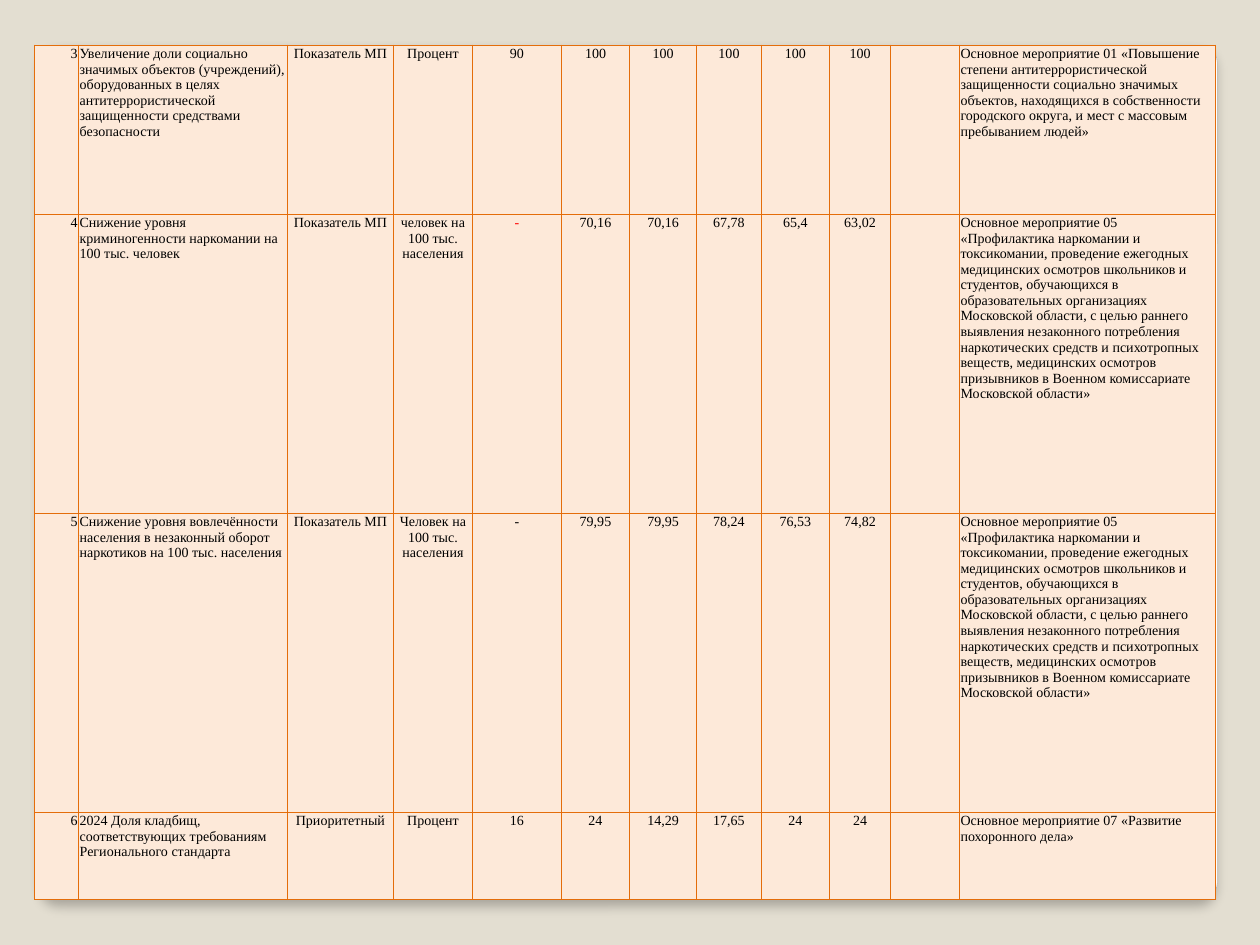
from lxml.etree import SubElement as Sub
from pptx import Presentation
from pptx.dml.color import RGBColor
from pptx.enum.shapes import MSO_SHAPE as Shape
from pptx.enum.text import PP_ALIGN as Align
from pptx.oxml.ns import qn
from pptx.util import Pt


def color(code):
    return RGBColor.from_string(code)


class Deck:
    font, size = "Times New Roman", 8
    ink, red = "000000", "FF0000"
    back, cream, edge = "E3DED1", "FDE9D9", "E46D0A"

    def __init__(self):
        self.prs = Presentation()
        self.prs.slide_width, self.prs.slide_height = Pt(720), Pt(540)
        self.slide = self.prs.slides.add_slide(self.prs.slide_layouts[6])
        fill = self.slide.background.fill
        fill.solid()
        fill.fore_color.rgb = color(self.back)

    def panel(self, left, top, width, height):
        box = self.slide.shapes.add_shape(
            Shape.ROUNDED_RECTANGLE, Pt(left), Pt(top), Pt(width), Pt(height))
        box.adjustments[0] = 0.02
        box.fill.solid()
        box.fill.fore_color.rgb = color("FFFFFF")
        box.line.color.rgb = color("A4A4A4")
        box.line.width = Pt(0.16)
        box.shadow.inherit = False
        effects = box._element.spPr.find(qn("a:effectLst"))
        shade = Sub(effects, qn("a:outerShdw"), blurRad=str(Pt(6)),
                    dist=str(Pt(4)), dir="5400000", algn="t", rotWithShape="0")
        tone = Sub(shade, qn("a:srgbClr"), val="000000")
        Sub(tone, qn("a:alpha"), val="25000")

    def table(self, left, top, cols, rows, data):
        frame = self.slide.shapes.add_table(
            len(rows), len(cols), Pt(left), Pt(top), Pt(sum(cols)), Pt(sum(rows)))
        grid = frame.table
        grid.first_row = grid.horz_banding = False
        for col, width in zip(grid.columns, cols):
            col.width = Pt(width)
        for row, height, texts in zip(grid.rows, rows, data):
            row.height = Pt(height)
            for n, (cell, text) in enumerate(zip(row.cells, texts)):
                align = ALIGN.get(n, Align.CENTER)
                self.cell(cell, text, align)
        return grid

    def cell(self, cell, text, align):
        props = cell._tc.get_or_add_tcPr()
        for side in ("lnL", "lnR", "lnT", "lnB"):
            line = Sub(props, qn("a:" + side), w=str(Pt(0.5)))
            paint = Sub(line, qn("a:solidFill"))
            Sub(paint, qn("a:srgbClr"), val=self.edge)
        cell.fill.solid()
        cell.fill.fore_color.rgb = color(self.cream)
        cell.margin_left = cell.margin_right = cell.margin_top = Pt(0.6)
        cell.margin_bottom = 0
        cell.text = text
        para = cell.text_frame.paragraphs[0]
        para.alignment = align
        self.style(para, self.ink)

    def style(self, para, ink):
        para.font.name, para.font.size = self.font, Pt(self.size)
        para.font.color.rgb = color(ink)

    def save(self):
        self.prs.save("out.pptx")


# Columns that are not centred
ALIGN = {0: Align.RIGHT, 1: Align.LEFT, 11: Align.LEFT}

# Table sizes and content
COLS = [25.1, 119.4, 60.6, 45.1, 50.9, 38.9, 38.3, 37.1, 38.9, 34.9, 39.4, 146.3]
ROWS = [96.6, 170.9, 170.9, 49.7]
DRUGS = (
    "Основное мероприятие 05 «Профилактика наркомании и токсикомании, "
    "проведение ежегодных медицинских осмотров школьников и студентов, "
    "обучающихся в образовательных организациях Московской области, с целью "
    "раннего выявления незаконного потребления наркотических средств и "
    "психотропных веществ, медицинских осмотров призывников в Военном "
    "комиссариате Московской области»")
DATA = [
    ["3", "Увеличение доли социально значимых объектов (учреждений), "
     "оборудованных в целях антитеррористической защищенности средствами "
     "безопасности", "Показатель МП", "Процент",
     "90", "100", "100", "100", "100", "100", "",
     "Основное мероприятие 01 «Повышение степени антитеррористической "
     "защищенности социально значимых объектов, находящихся в собственности "
     "городского округа, и мест с массовым пребыванием людей»"],
    ["4", "Снижение уровня криминогенности наркомании на 100 тыс. человек",
     "Показатель МП", "человек на 100 тыс. населения",
     "-", "70,16", "70,16", "67,78", "65,4", "63,02", "", DRUGS],
    ["5", "Снижение уровня вовлечённости населения в незаконный оборот "
     "наркотиков на 100 тыс. населения",
     "Показатель МП", "Человек на 100 тыс. населения",
     "-", "79,95", "79,95", "78,24", "76,53", "74,82", "", DRUGS],
    ["6", "2024 Доля кладбищ, соответствующих требованиям Регионального "
     "стандарта", "Приоритетный", "Процент",
     "16", "24", "14,29", "17,65", "24", "24", "",
     "Основное мероприятие 07 «Развитие похоронного дела»"],
]


def main():
    deck = Deck()
    # Backing panel
    deck.panel(23.8, 25.9, 671.8, 488.2)
    # Indicator table, with one red dash
    grid = deck.table(19.8, 25.8, COLS, ROWS, DATA)
    deck.style(grid.cell(1, 4).text_frame.paragraphs[0], deck.red)
    deck.save()


if __name__ == "__main__":
    main()
